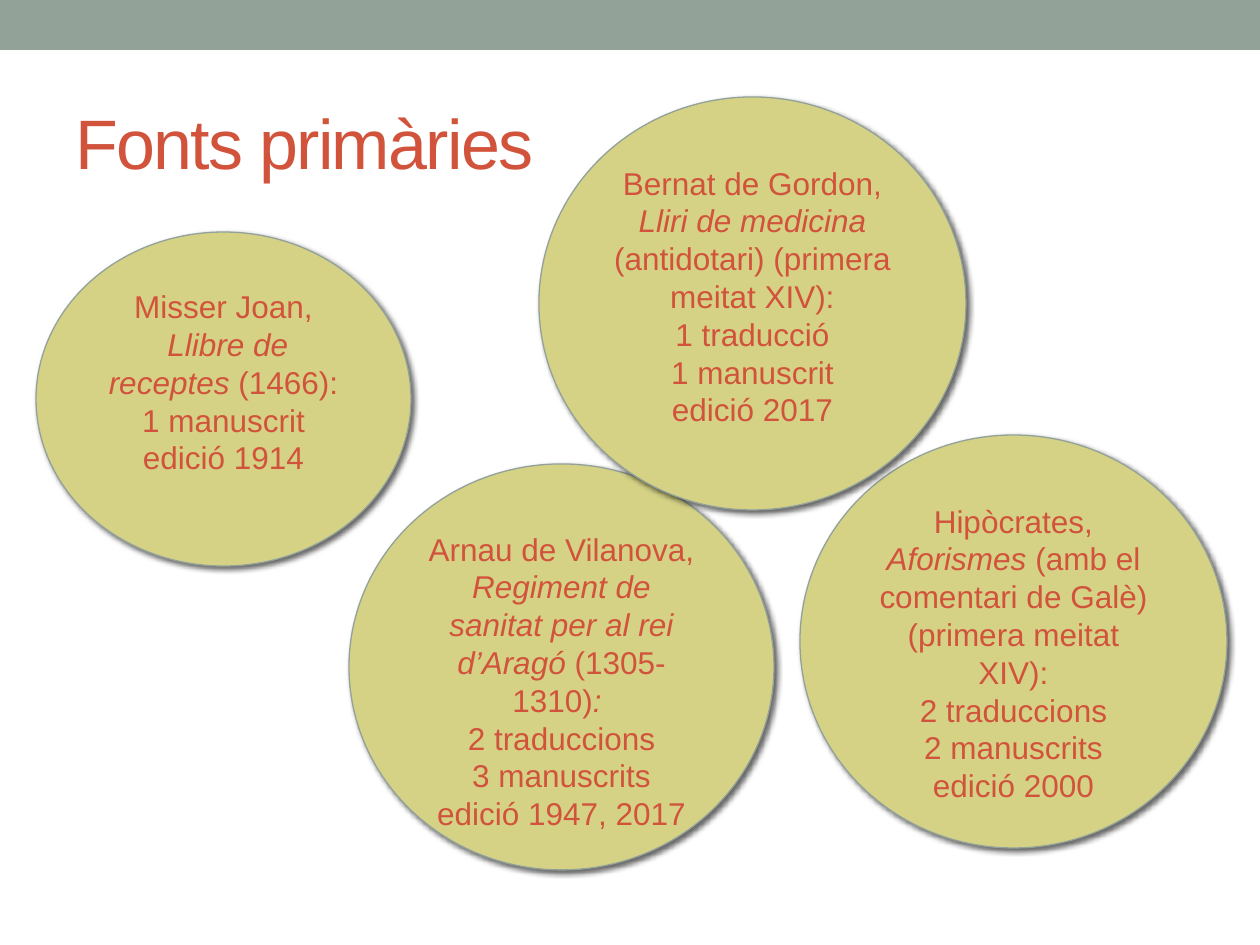
from lxml.etree import SubElement
from pptx import Presentation
from pptx.dml.color import RGBColor
from pptx.enum.shapes import MSO_SHAPE as Shape
from pptx.enum.text import MSO_ANCHOR as Anchor, PP_ALIGN as Align
from pptx.oxml.ns import qn
from pptx.util import Emu, Pt

PX = 914400 // 126
TITLE_ONLY = 5

THEME = {
    "font": "Arial",
    "text": RGBColor.from_string("D2533C"),
    "band": RGBColor.from_string("93A299"),
    "circle": RGBColor.from_string("D5D286"),
    "title_size": Pt(40),
    "body_size": Pt(18),
    "leading": Pt(21.6),
}

TITLE = "Fonts primàries"
# Each source: box in px, then paragraphs of (words, italic) spans.
SOURCES = [
    ((36, 232, 375, 334), [
        [("Misser Joan,", False)],
        [(" ", False), ("Llibre de receptes", True), (" (1466):", False)],
        [("1 manuscrit", False)],
        [("edició 1914", False)],
    ]),
    ((349, 464, 425, 406), [
        [("Arnau de Vilanova, ", False),
         ("Regiment de sanitat per al rei d’Aragó ", True),
         ("(1305-1310)", False), (": ", True)],
        [("2 traduccions", False)],
        [("3 manuscrits", False)],
        [("edició 1947, 2017", False)],
    ]),
    ((800, 435, 427, 413), [
        [("Hipòcrates, ", False), ("Aforismes", True),
         (" (amb el comentari de Galè) (primera meitat XIV):", False)],
        [("2 traduccions", False)],
        [("2 manuscrits", False)],
        [("edició 2000", False)],
    ]),
    ((539, 97, 427, 413), [
        [("Bernat de Gordon, ", False), ("Lliri de medicina ", True),
         ("(antidotari) (primera meitat XIV):", False)],
        [("1 traducció", False)],
        [("1 manuscrit", False)],
        [("edició 2017", False)],
    ]),
]


def px(*lengths):
    return [Emu(length * PX) for length in lengths]


def style(span, size, italic=False):
    span.font.name = THEME["font"]
    span.font.size = size
    span.font.color.rgb = THEME["text"]
    span.font.italic = italic


def add_shadow(shape):
    """Soft black shadow falling to the lower right."""
    effects = SubElement(shape._element.spPr, qn("a:effectLst"))
    shadow = SubElement(effects, qn("a:outerShdw"), blurRad=str(Pt(3)),
                        dist=str(Pt(2)), dir="2700000", rotWithShape="0")
    color = SubElement(shadow, qn("a:srgbClr"), val="000000")
    SubElement(color, qn("a:alpha"), val="60000")


def add_band(page):
    band = page.shapes.add_shape(Shape.RECTANGLE, *px(0, 0, 1260, 50))
    band.shadow.inherit = False
    band.fill.solid()
    band.fill.fore_color.rgb = THEME["band"]
    band.line.fill.background()


def set_title(page):
    title = page.shapes.title
    title.left, title.top, title.width, title.height = px(63, 73, 1134, 136)
    frame = title.text_frame
    frame.text = TITLE
    frame.vertical_anchor = Anchor.MIDDLE
    para = frame.paragraphs[0]
    para.alignment = Align.LEFT
    span = para.runs[0]
    style(span, THEME["title_size"])
    span.font._element.set("spc", "-100")


def add_source(page, box, paragraphs):
    circle = page.shapes.add_shape(Shape.OVAL, *px(*box))
    circle.fill.solid()
    circle.fill.fore_color.rgb = THEME["circle"]
    circle.line.color.rgb = THEME["band"]
    circle.line.width = Pt(0.75)
    add_shadow(circle)
    frame = circle.text_frame
    frame.word_wrap = True
    frame.vertical_anchor = Anchor.TOP
    for index, spans in enumerate(paragraphs):
        para = frame.add_paragraph() if index else frame.paragraphs[0]
        para.alignment = Align.CENTER
        para.line_spacing = THEME["leading"]
        for words, italic in spans:
            span = para.add_run()
            span.text = words
            style(span, THEME["body_size"], italic)


def main():
    deck = Presentation()
    deck.slide_width, deck.slide_height = px(1260, 945)
    page = deck.slides.add_slide(deck.slide_layouts[TITLE_ONLY])
    add_band(page)
    set_title(page)
    for box, paragraphs in SOURCES:
        add_source(page, box, paragraphs)
    deck.save("out.pptx")


if __name__ == "__main__":
    main()
